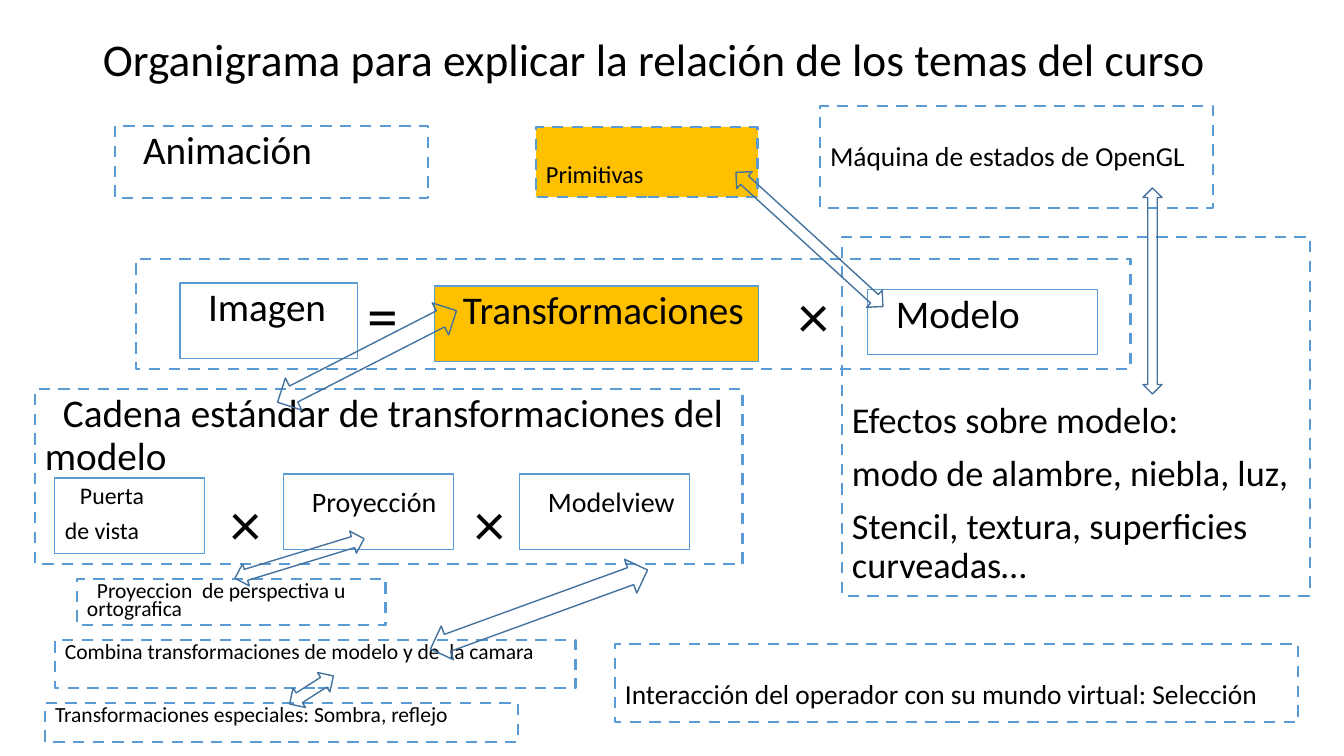
from dataclasses import dataclass

from pptx import Presentation
from pptx.dml.color import RGBColor
from pptx.enum.dml import MSO_LINE
from pptx.enum.shapes import MSO_SHAPE
from pptx.enum.text import MSO_ANCHOR, MSO_AUTO_SIZE, PP_ALIGN
from pptx.util import Emu, Pt

RECTANGLE = MSO_SHAPE.RECTANGLE
DOUBLE_ARROW = MSO_SHAPE.UP_DOWN_ARROW
DASH = MSO_LINE.DASH
TOP, MIDDLE = MSO_ANCHOR.TOP, MSO_ANCHOR.MIDDLE
LEFT = PP_ALIGN.LEFT
NO_AUTOFIT = MSO_AUTO_SIZE.NONE
PX_PER_INCH = 100.8


@dataclass(frozen=True)
class Theme:
    font: str = "Calibri"
    ink: RGBColor = RGBColor(0, 0, 0)
    paper: RGBColor = RGBColor(255, 255, 255)
    gold: RGBColor = RGBColor(0xFF, 0xC0, 0x00)
    border: RGBColor = RGBColor(0x5B, 0x9B, 0xD5)
    arrow: RGBColor = RGBColor(0x43, 0x73, 0x9E)
    title: float = 32.4
    operator: float = 44
    heading: float = 28
    effects: float = 25.9
    stage: float = 20
    topic: float = 19.6
    primitive: float = 17.5
    viewport: float = 17
    note: float = 15.4


THEME = Theme()


def px(length):
    return Emu(round(length * 914400 / PX_PER_INCH))


def place(box, left, top, width, height):
    """Return a box whose corner is offset from the corner of another."""
    return box[0] + left, box[1] + top, width, height


def write(shape, text, size=THEME.heading, spacing=0.9, indent=0, inset=5, anchor=TOP):
    frame = shape.text_frame
    frame.auto_size = NO_AUTOFIT
    frame.word_wrap = True
    frame.vertical_anchor = anchor
    frame.margin_left = frame.margin_right = px(10)
    frame.margin_top, frame.margin_bottom = px(inset), px(5)
    for number, line in enumerate(text.split("\n")):
        para = frame.add_paragraph() if number else frame.paragraphs[0]
        para.alignment = LEFT
        para.line_spacing = spacing
        para.space_before = Pt(10 if number else 0)
        if indent and not number:
            properties = para._p.get_or_add_pPr()
            properties.set("marL", "0")
            properties.set("indent", str(px(indent)))
        span = para.add_run()
        span.text = line
        span.font.name = THEME.font
        span.font.size = Pt(size)
        span.font.color.rgb = THEME.ink


def add_box(page, box, text="", dashed=False, fill=None, **text_format):
    shape = page.shapes.add_shape(RECTANGLE, *map(px, box))
    shape.shadow.inherit = False
    if fill is None:
        shape.fill.background()
    else:
        shape.fill.solid()
        shape.fill.fore_color.rgb = fill
    shape.line.color.rgb = THEME.border
    shape.line.width = Pt(2 if dashed else 0.75)
    if dashed:
        shape.line.dash_style = DASH
    if text:
        write(shape, text, **text_format)


def add_operator(page, box, sign):
    write(page.shapes.add_textbox(*map(px, box)), sign, size=THEME.operator)


def add_arrow(page, box, rotation=0, shaft=0.265):
    arrow = page.shapes.add_shape(DOUBLE_ARROW, *map(px, box))
    arrow.shadow.inherit = False
    arrow.fill.background()
    arrow.line.color.rgb = THEME.arrow
    arrow.line.width = Pt(1)
    arrow.adjustments[0] = shaft
    arrow.adjustments[1] = 0.5
    arrow.rotation = rotation


def add_title(page, box):
    title = page.shapes.title
    title.left, title.top, title.width, title.height = map(px, box)
    write(title, "Organigrama para explicar la relación de los temas del curso",
          size=THEME.title, anchor=MIDDLE)


def add_top_topics(page, box):
    add_box(page, place(box, 0, 20, 313, 72), "Animación", dashed=True, indent=18)
    add_box(page, place(box, 421, 21, 222, 70), "Primitivas", dashed=True,
            fill=THEME.gold, size=THEME.primitive, spacing=0.7, inset=40)
    add_box(page, place(box, 705, 0, 393, 102), "Máquina de estados de OpenGL",
            dashed=True, size=THEME.topic, spacing=0.7, inset=42)


def add_equation(page, box):
    add_box(page, box, dashed=True)
    add_box(page, place(box, 44, 24, 178, 76), "Imagen", indent=18)
    add_box(page, place(box, 299, 27, 324, 76), "Transformaciones",
            fill=THEME.gold, indent=18)
    add_box(page, place(box, 732, 31, 230, 65), "Modelo", indent=18)
    for left, sign in ((222, "="), (653, "×")):
        add_operator(page, place(box, left, 21, 53, 83), sign)


def add_transformation_chain(page, box):
    add_box(page, box, "Cadena estándar de transformaciones del modelo",
            dashed=True, indent=18)
    add_box(page, place(box, 20, 89, 150, 76), "Puerta\nde vista",
            size=THEME.viewport, spacing=0.7, indent=15, inset=11)
    for left, stage in ((249, "Proyección"), (485, "Modelview")):
        add_box(page, place(box, left, 85, 170, 76), stage,
                size=THEME.stage, indent=18, inset=14)
    for left in (186, 430):
        add_operator(page, place(box, left, 99, 53, 83), "×")


def add_chain_notes(page, box):
    notes = (
        ((32, 0, 309, 46), "Proyeccion  de perspectiva u ortografica", 10),
        ((10, 61, 521, 48), "Combina transformaciones de modelo y de  la camara", 0),
        ((0, 124, 473, 39), "Transformaciones especiales: Sombra, reflejo", 0),
    )
    for offset, text, indent in notes:
        add_box(page, place(box, *offset), text, dashed=True,
                size=THEME.note, spacing=0.7, indent=indent)


def add_model_effects(page, box):
    add_box(page, box, "Efectos sobre modelo:\nmodo de alambre, niebla, luz,\n"
            "Stencil, textura, superficies curveadas…",
            dashed=True, size=THEME.effects, inset=165)


def add_interaction(page, box):
    add_box(page, box, "Interacción del operador con su mundo virtual: Selección",
            dashed=True, size=THEME.topic, spacing=0.7, inset=42)


def add_relations(page, box):
    relations = (
        ((349, 256, 36, 201), 62.9),
        ((521, 494, 36, 231), 70),
        ((288, 491, 23, 135), 73),
        ((798, 140, 23, 199), 312.4),
        ((300, 664, 23, 52), 57.4),
    )
    for offset, rotation in relations:
        add_arrow(page, place(box, *offset), rotation)
    add_arrow(page, place(box, 1143, 188, 19, 206), shaft=0.655)


def main():
    deck = Presentation()
    deck.slide_width, deck.slide_height = px(1344), px(756)
    page = deck.slides.add_slide(deck.slide_layouts[5])
    page.background.fill.solid()
    page.background.fill.fore_color.rgb = THEME.paper
    add_title(page, (93, 10, 1159, 104))
    add_top_topics(page, (115, 106, 1098, 102))
    add_equation(page, (136, 259, 995, 110))
    add_transformation_chain(page, (35, 389, 708, 175))
    add_chain_notes(page, (45, 579, 531, 163))
    add_model_effects(page, (842, 237, 468, 359))
    add_interaction(page, (615, 644, 683, 78))
    add_relations(page, (0, 0, 1344, 756))
    deck.save("out.pptx")


if __name__ == "__main__":
    main()
